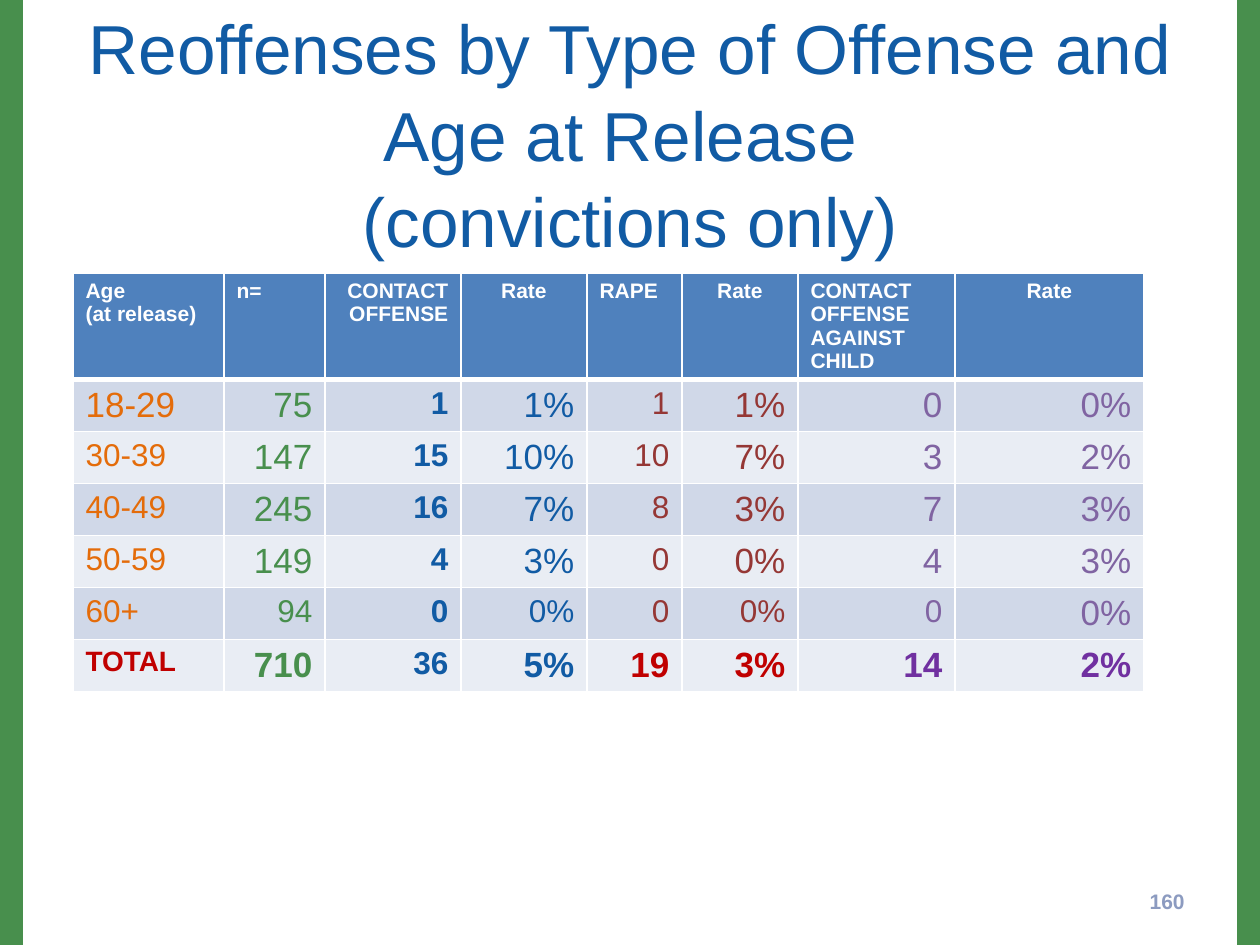
from lxml import etree
from pptx import Presentation
from pptx.dml.color import RGBColor
from pptx.enum.shapes import MSO_SHAPE as Shape
from pptx.enum.text import MSO_ANCHOR as Anchor, PP_ALIGN as Align
from pptx.oxml.ns import qn
from pptx.util import Pt

EMU_PER_PX = 914400 / 126
FONT = "Arial"
BLUE, GREEN, ORANGE = "115BA4", "488F4D", "E46C0A"
MAROON, LILAC, RED, PURPLE = "953735", "8064A2", "C00000", "7030A0"
WHITE, HEADER_FILL = "FFFFFF", "4F81BD"
BAND_FILLS = ("D0D8E8", "E9EDF4")

COLUMN_WIDTHS = (151, 101, 136, 126, 95, 116, 157, 189)
HEADER_HEIGHT, ROW_HEIGHT = 105, 52
HEADERS = ("Age\n(at release)", "n=", "CONTACT OFFENSE", "Rate", "RAPE", "Rate",
           "CONTACT OFFENSE AGAINST CHILD", "Rate")
HEADER_ALIGNS = (Align.LEFT, Align.LEFT, Align.RIGHT, Align.CENTER,
                 Align.LEFT, Align.CENTER, Align.LEFT, Align.CENTER)
ROWS = (
    ("18-29", "75", "1", "1%", "1", "1%", "0", "0%"),
    ("30-39", "147", "15", "10%", "10", "7%", "3", "2%"),
    ("40-49", "245", "16", "7%", "8", "3%", "7", "3%"),
    ("50-59", "149", "4", "3%", "0", "0%", "4", "3%"),
    ("60+", "94", "0", "0%", "0", "0%", "0", "0%"),
    ("TOTAL", "710", "36", "5%", "19", "3%", "14", "2%"),
)
AGE_COLORS = (ORANGE, GREEN, BLUE, BLUE, MAROON, MAROON, LILAC, LILAC)
TOTAL_COLORS = (RED, GREEN, BLUE, BLUE, RED, RED, PURPLE, PURPLE)
AGE_SIZES = (18, 20, 18, 20, 18, 20, 20, 20)
ROW_SIZES = {
    "18-29": (20, 20, 18, 20, 18, 20, 20, 20),
    "60+": (18, 18, 18, 18, 18, 18, 18, 20),
    "TOTAL": (16, 20, 18, 20, 20, 20, 20, 20),
}
CONTACT_COLUMN = 2


def px(length):
    return round(length * EMU_PER_PX)


def color(hex_string):
    return RGBColor.from_string(hex_string)


def write(frame, text, size, ink, bold=False, align=Align.LEFT, spacing=None):
    """Fill a text frame; a newline starts a paragraph, a vertical tab a line."""
    frame.word_wrap = True
    frame.text = text
    for para in frame.paragraphs:
        para.alignment = align
        if spacing:
            para.line_spacing = spacing
        for span in para.runs:
            span.font.name = FONT
            span.font.size = Pt(size)
            span.font.bold = bold
            span.font.color.rgb = color(ink)


def add_side_bar(page, left):
    bar = page.shapes.add_shape(Shape.RECTANGLE, px(left), 0, px(21), px(945))
    bar.shadow.inherit = False
    bar.fill.solid()
    bar.fill.fore_color.rgb = color(GREEN)
    bar.line.color.rgb = color(GREEN)
    bar.line.width = Pt(2)


def set_title(page, text):
    title = page.shapes.title
    title.left, title.top, title.width, title.height = map(px, (63, 38, 1134, 158))
    frame = title.text_frame
    frame.vertical_anchor = Anchor.MIDDLE
    frame.margin_top, frame.margin_bottom = px(36), px(6)
    write(frame, text, 39.6, BLUE, align=Align.CENTER, spacing=1.04)


def set_borders(cell, bottom):
    """Draw white cell borders, 1 pt wide except for the bottom one."""
    properties = cell._tc.get_or_add_tcPr()
    for index, (side, width) in enumerate(
            (("lnL", 1), ("lnR", 1), ("lnT", 1), ("lnB", bottom))):
        line = etree.Element(qn(f"a:{side}"), w=str(Pt(width)))
        fill = etree.SubElement(line, qn("a:solidFill"))
        etree.SubElement(fill, qn("a:srgbClr"), val=WHITE)
        properties.insert(index, line)


def fill_cell(cell, text, fill, bottom=1, **text_format):
    cell.fill.solid()
    cell.fill.fore_color.rgb = color(fill)
    set_borders(cell, bottom)
    write(cell.text_frame, text, **text_format)


def add_offense_table(page):
    height = HEADER_HEIGHT + ROW_HEIGHT * len(ROWS)
    table = page.shapes.add_table(
        len(ROWS) + 1, len(HEADERS), px(73), px(273),
        px(sum(COLUMN_WIDTHS)), px(height)).table
    for column, width in zip(table.columns, COLUMN_WIDTHS):
        column.width = px(width)
    for index, row in enumerate(table.rows):
        row.height = px(ROW_HEIGHT if index else HEADER_HEIGHT)

    for column, (text, align) in enumerate(zip(HEADERS, HEADER_ALIGNS)):
        fill_cell(table.cell(0, column), text, HEADER_FILL, bottom=3,
                  size=12, ink=WHITE, bold=True, align=align)

    for index, values in enumerate(ROWS):
        label = values[0]
        is_total = label == "TOTAL"
        inks = TOTAL_COLORS if is_total else AGE_COLORS
        sizes = ROW_SIZES.get(label, AGE_SIZES)
        for column, text in enumerate(values):
            fill_cell(table.cell(index + 1, column), text, BAND_FILLS[index % 2],
                      size=sizes[column], ink=inks[column],
                      bold=is_total or column == CONTACT_COLUMN,
                      align=Align.RIGHT if column else Align.LEFT)


def add_page_number(page, number):
    box = page.shapes.add_textbox(px(903), px(876), px(294), px(50))
    box.text_frame.vertical_anchor = Anchor.MIDDLE
    write(box.text_frame, number, 12, "8C9BC0", bold=True, align=Align.RIGHT)


def main():
    deck = Presentation()
    deck.slide_width, deck.slide_height = px(1260), px(945)
    page = deck.slides.add_slide(deck.slide_layouts[5])
    for left in (1239, 0):
        add_side_bar(page, left)
    set_title(page, "Reoffenses by Type of Offense and Age at Release \v(convictions only)")
    add_offense_table(page)
    add_page_number(page, "160")
    deck.save("out.pptx")


if __name__ == "__main__":
    main()
